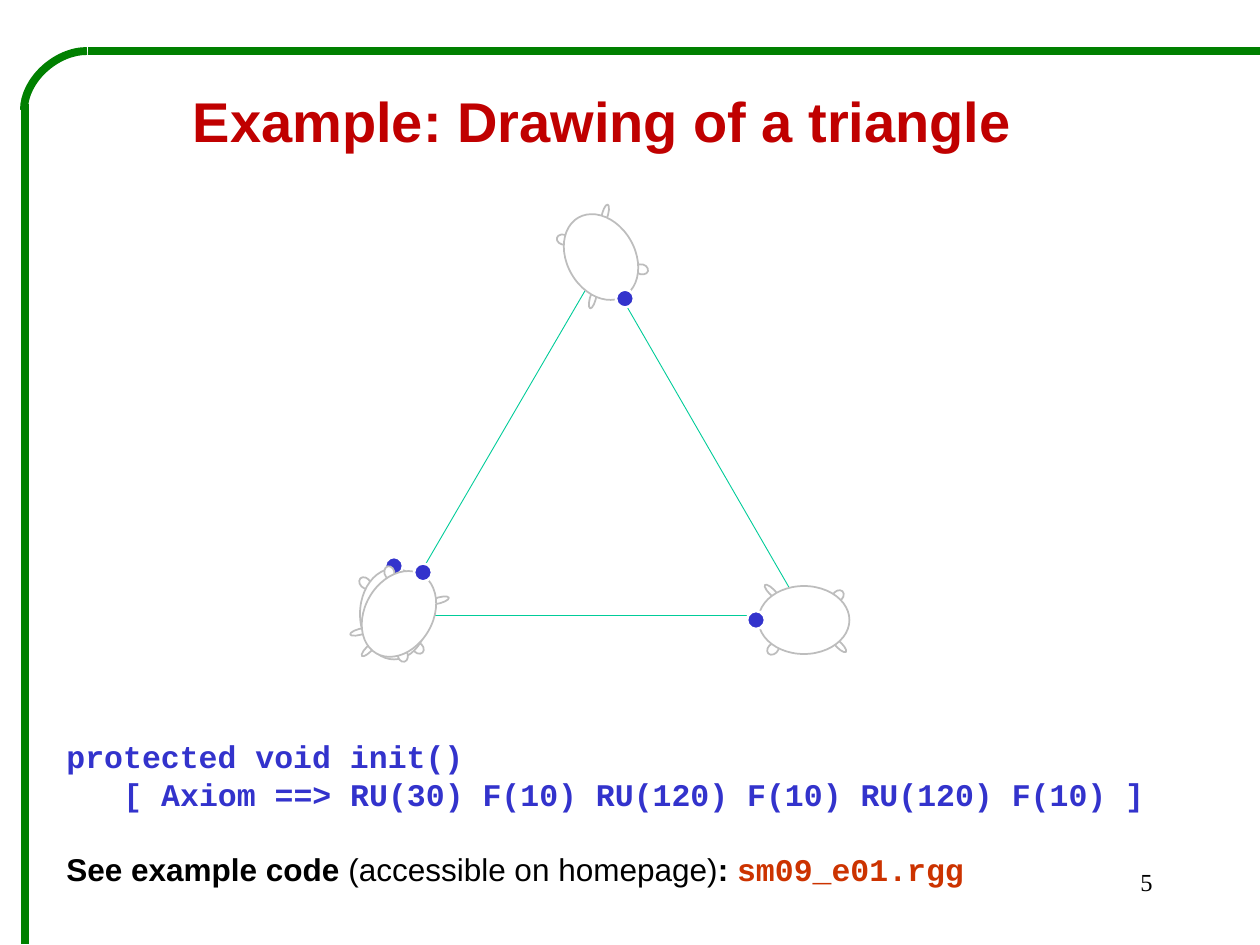
import math
import pptx
import pptx.util
import pptx.dml.color
import pptx.enum.shapes
import pptx.enum.text
import pptx.oxml.ns
import lxml.etree

SCALE = 914400 / 126
GREEN, TEAL, BLUE, GREY = "008000", "00CC99", "3333CC", "BDBDBD"
WHITE, BLACK, RED, RUST = "FFFFFF", "000000", "C00000", "CC3300"
ALIGN = pptx.enum.text.PP_ALIGN
LINK = pptx.enum.shapes.MSO_CONNECTOR
OVAL = pptx.enum.shapes.MSO_SHAPE.OVAL
QN = pptx.oxml.ns.qn


def px(num):
    return pptx.util.Emu(round(num * SCALE))


def tint(code):
    return pptx.dml.color.RGBColor.from_string(code)


def style(item, vals):
    for key, val in vals.items():
        setattr(item, key, val)


def place(item, box):
    style(item, dict(zip(("left", "top", "width", "height"), map(px, box))))


def stroke(line, hue, size):
    line.color.rgb = tint(hue)
    line.width = pptx.util.Pt(size)


def write(para, text, hue, face, size, bold):
    run = para.add_run()
    run.text = text
    style(run.font, {"name": face, "size": pptx.util.Pt(size), "bold": bold})
    run.font.color.rgb = tint(hue)


def link(slide, start, end, hue, size, kind=LINK.STRAIGHT):
    line = slide.shapes.add_connector(kind, *map(px, start + end))
    stroke(line.line, hue, size)
    lxml.etree.SubElement(line._element.spPr, QN("a:effectLst"))
    return line


def frame(slide, box):
    left, top, right, base = box
    link(slide, (left, top + 53), (left, base), GREEN, 4.5)
    bend = link(slide, (left + 1, top - 2), (left + 60, top + 61),
                GREEN, 4.5, LINK.CURVE)
    props = bend._element.spPr
    props.find(QN("a:xfrm")).set("rot", str(270 * 60000))
    props.find(QN("a:prstGeom")).set("prst", "curvedConnector2")
    link(slide, (right, top), (left + 63, top), GREEN, 4.5)


def title(slide, box):
    head = slide.shapes.title
    place(head, box)
    text = head.text_frame
    style(text, {"vertical_anchor": pptx.enum.text.MSO_ANCHOR.MIDDLE,
                 "word_wrap": True,
                 "auto_size": pptx.enum.text.MSO_AUTO_SIZE.NONE})
    para = text.paragraphs[0]
    para.alignment = ALIGN.CENTER
    write(para, "Example: Drawing of a triangle", RED, "Arial", 32, True)


def turtle(slide, mid, turn):
    group = slide.shapes.add_group_shape()
    cos, sin = math.cos(math.radians(turn)), math.sin(math.radians(turn))
    parts = [
        (24, 34, 13, 10, 45, WHITE, GREY, 1),
        (-29, -31, 13, 10, 45, WHITE, GREY, 1),
        (28, -32, 20, 6, 135, WHITE, GREY, 1),
        (-25, 35, 20, 6, 135, WHITE, GREY, 1),
        (0, 0, 68, 91, 0, WHITE, GREY, 1),
        (0, -48, 18, 18, 0, BLUE, WHITE, 1.5),
    ]
    for x, y, wide, high, tilt, fill, edge, size in parts:
        left = mid[0] + x * cos - y * sin - wide / 2
        top = mid[1] + x * sin + y * cos - high / 2
        part = group.shapes.add_shape(OVAL, *map(px, (left, top, wide, high)))
        part.rotation = (tilt + turn) % 360
        part.shadow.inherit = False
        part.fill.solid()
        part.fill.fore_color.rgb = tint(fill)
        stroke(part.line, edge, size)


def drawing(slide, box):
    left, top, wide, high = box
    right, base, peak = left + wide, top + high, left + wide // 2
    for start, end in (((right, base), (left, base)),
                       ((peak, top), (right, base)),
                       ((left, base), (peak + 3, top))):
        link(slide, start, end, TEAL, 0.5)
    for mid, turn in (((left - 2, base - 1), 0), ((left + 3, base - 1), 30),
                      ((peak + 1, top - 3), 150), ((right - 1, base + 5), 270)):
        turtle(slide, mid, turn)


def code(slide, box):
    text = slide.shapes.add_textbox(*map(px, box)).text_frame
    text.word_wrap = True
    mono = ("Courier New", 18, True)
    first, rule, note = text.paragraphs[0], text.add_paragraph(), text.add_paragraph()
    write(first, "protected void init()", BLUE, *mono)
    write(rule, "[ Axiom ==> RU(30) F(10) RU(120) F(10) RU(120) F(10) ]", BLUE, *mono)
    rule._p.get_or_add_pPr().set("marL", str(px(57)))
    note.space_before = pptx.util.Pt(21)
    for words, bold in (("See example code ", True),
                        ("(accessible on homepage)", False), (": ", True)):
        write(note, words, BLACK, "Arial", 18, bold)
    write(note, "sm09_e01.rgg", RUST, *mono)


def number(slide, box):
    text = slide.shapes.add_textbox(*map(px, box)).text_frame
    text.word_wrap = True
    para = text.paragraphs[0]
    para.alignment = ALIGN.RIGHT
    write(para, "5", BLACK, "Times New Roman", 14, False)


def main():
    deck = pptx.Presentation()
    style(deck, {"slide_width": px(1260), "slide_height": px(945)})
    slide = deck.slides.add_slide(deck.slide_layouts[5])
    frame(slide, (25, 51, 1260, 944))
    title(slide, (174, 76, 857, 89))
    drawing(slide, (396, 260, 409, 355))
    code(slide, (54, 731, 1152, 164))
    number(slide, (903, 861, 262, 63))
    deck.save("out.pptx")


if __name__ == "__main__":
    main()
